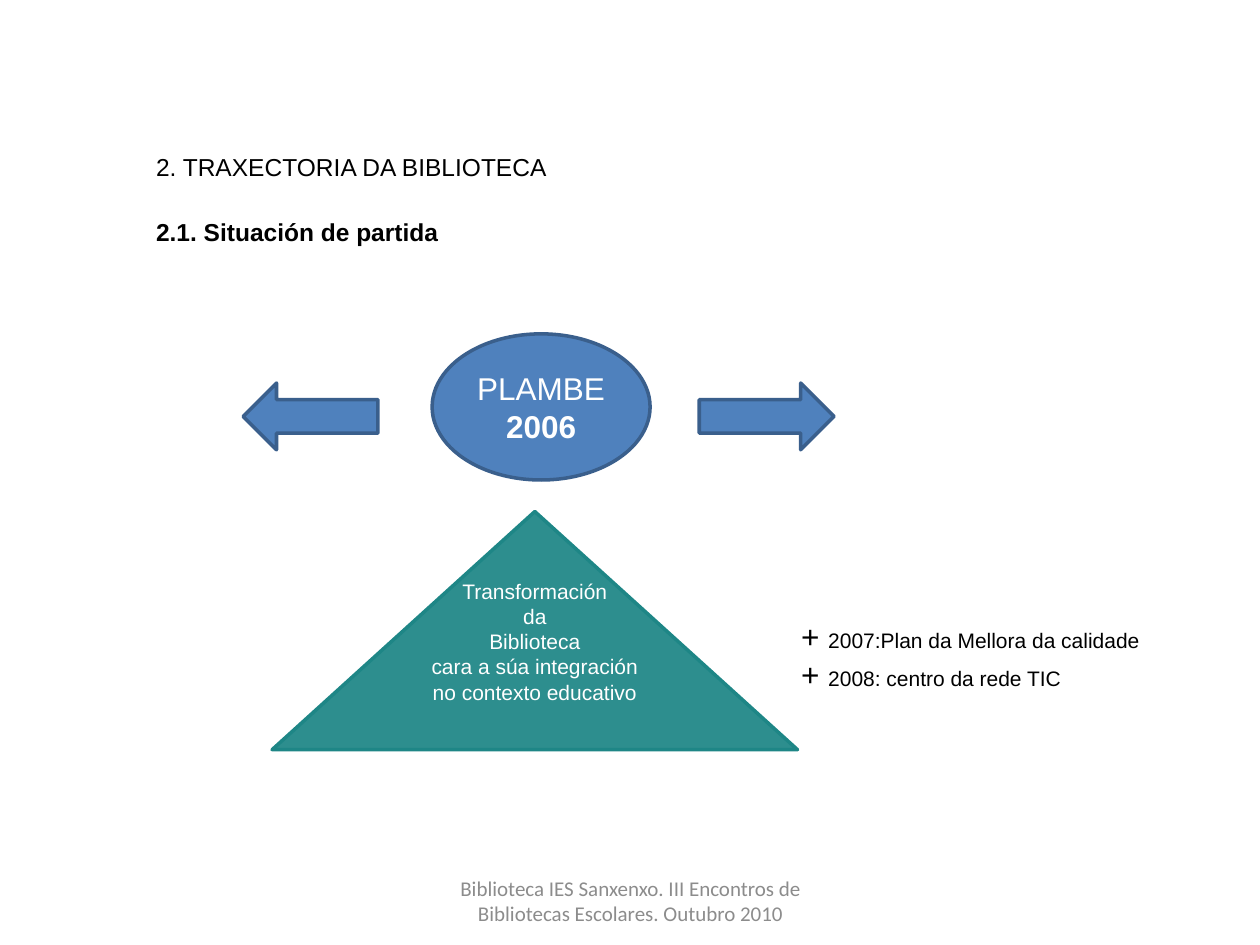
from pptx import Presentation
from pptx.util import Inches, Pt
from pptx.dml.color import RGBColor
from pptx.enum.shapes import MSO_SHAPE as Shape
from pptx.enum.text import MSO_ANCHOR as Anchor, PP_ALIGN as Align
from lxml import etree

BLUE, BLUE_EDGE, TEAL = "4F81BD", "3A5F8C", "1E8686"
BLACK, WHITE, GRAY = "000000", "FFFFFF", "8C8C8C"

HEADING = [[("2. TRAXECTORIA DA BIBLIOTECA", 14, False)],
           [("2.1. Situación de partida", 14, True)]]
PLAN = [[("PLAMBE", 18, False)], [("2006", 18, True)]]
GOAL = [[(line, 12, False)] for line in (
    "Transformación", "da", "Biblioteca",
    "cara a súa integración", "no contexto educativo")]
MILESTONES = [[("+ ", 18, False), (milestone, 12, False)] for milestone in (
    "2007:Plan da Mellora da calidade", "2008: centro da rede TIC")]
FOOTER = [[("Biblioteca IES Sanxenxo. III Encontros de Bibliotecas Escolares. "
            "Outubro 2010", 12, False)]]

ARROWS = [(Shape.LEFT_ARROW, 1.93), (Shape.RIGHT_ARROW, 5.55)]


def color(value):
    return RGBColor.from_string(value)


def write(holder, paragraphs, ink, align=Align.LEFT, anchor=Anchor.TOP,
          font="Arial", gap=0, wrap=True):
    frame = holder.text_frame
    frame.word_wrap = wrap
    frame.vertical_anchor = anchor
    for index, runs in enumerate(paragraphs):
        paragraph = frame.add_paragraph() if index else frame.paragraphs[0]
        paragraph.alignment = align
        if index:
            paragraph.space_before = Pt(gap)
        for text, size, bold in runs:
            run = paragraph.add_run()
            run.text = text
            run.font.name, run.font.size, run.font.bold = font, Pt(size), bold
            run.font.color.rgb = color(ink)


def add_box(slide, place):
    return slide.shapes.add_textbox(*map(Inches, place))


def add_figure(slide, kind, place, fill, edge):
    figure = slide.shapes.add_shape(kind, *map(Inches, place))
    figure.shadow.inherit = False
    figure.fill.solid()
    figure.fill.fore_color.rgb = color(fill)
    figure.line.color.rgb = color(edge)
    figure.line.width = Pt(2)
    return figure


def set_opacity(figure, percent):
    fill = figure.fill.fore_color._xFill[0]
    namespace = etree.QName(fill).namespace
    alpha = etree.SubElement(fill, f"{{{namespace}}}alpha")
    alpha.set("val", str(percent * 1000))


def main():
    deck = Presentation()
    deck.slide_width, deck.slide_height = Inches(10), Inches(7.5)
    slide = deck.slides.add_slide(deck.slide_layouts[6])

    write(add_box(slide, (3.42, 6.95, 3.17, 0.4)), FOOTER, GRAY,
          Align.CENTER, Anchor.MIDDLE, font="Calibri")
    write(add_box(slide, (1.14, 1.16, 6.46, 0.9)), HEADING, BLACK, gap=20)

    for kind, left in ARROWS:
        add_figure(slide, kind, (left, 3.04, 1.07, 0.53), BLUE, BLUE_EDGE)

    plan = add_figure(slide, Shape.OVAL, (3.43, 2.65, 1.73, 1.16), BLUE, BLUE_EDGE)
    write(plan, PLAN, WHITE, Align.CENTER, Anchor.MIDDLE)

    goal = add_figure(slide, Shape.ISOSCELES_TRIANGLE, (2.16, 4.06, 4.17, 1.89),
                      TEAL, TEAL)
    set_opacity(goal, 93)
    goal.text_frame.margin_bottom = Inches(0.36)
    write(goal, GOAL, WHITE, Align.CENTER, Anchor.BOTTOM)

    write(add_box(slide, (6.26, 4.85, 2.96, 0.71)), MILESTONES, BLACK, wrap=False)

    deck.save("out.pptx")


if __name__ == "__main__":
    main()
